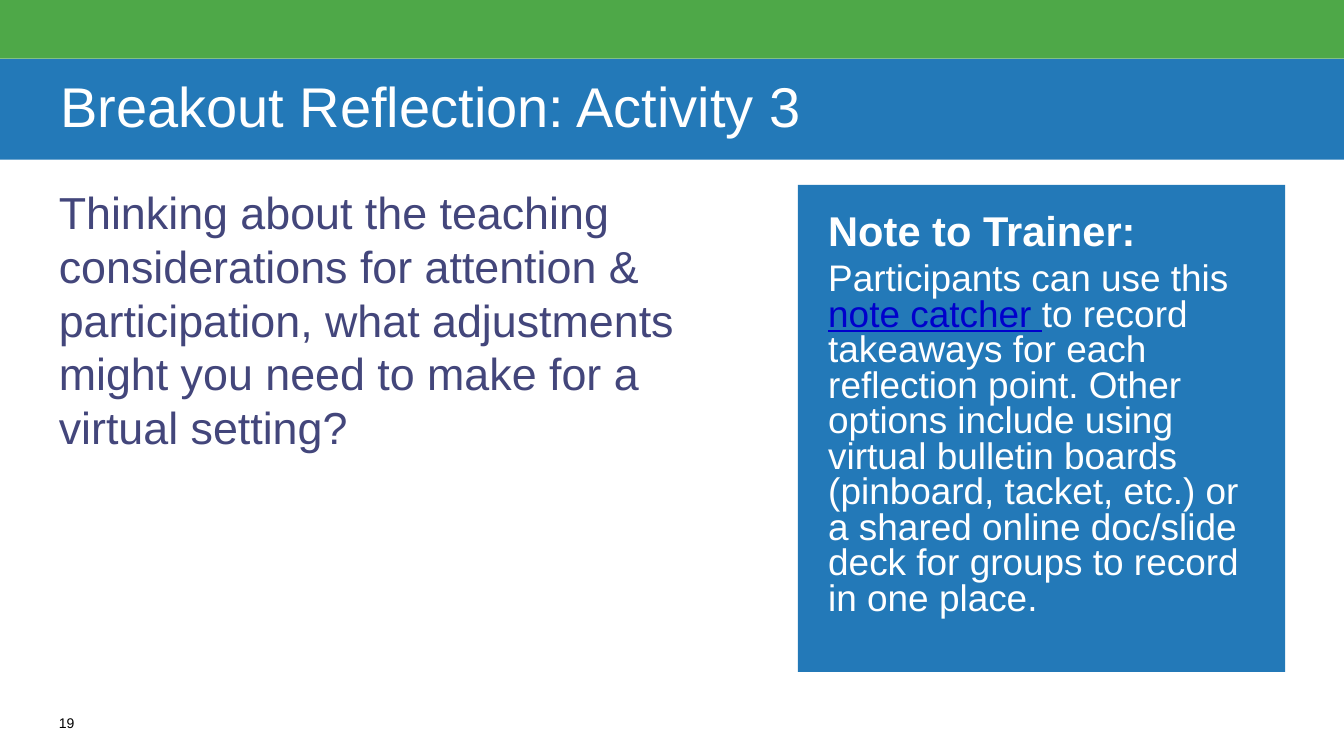
from pptx import Presentation
from pptx.dml.color import RGBColor
from pptx.enum.shapes import MSO_SHAPE as Shape
from pptx.enum.text import MSO_ANCHOR as Anchor, MSO_AUTO_SIZE as AutoSize, PP_ALIGN as Align
from pptx.util import Pt
from lxml.etree import SubElement
from pptx.oxml.ns import qn

GREEN, BLUE, INDIGO = "4EA848", "2379B8", "43467B"
WHITE, BLACK, LINK = "FFFFFF", "000000", "0000CC"
WIDTH, HEIGHT = 960, 540
MARGIN, BAND, TITLE_HEIGHT = 42, 42, 72
CONTENT_TOP, NOTE_SIDE = 132, 348


def paint(colour_format, colour):
    colour_format.rgb = RGBColor.from_string(colour)


class SlideBuilder:
    def __init__(self, page, font="Arial"):
        self.page = page
        self.font = font

    def fill(self, shape, colour):
        shape.fill.solid()
        paint(shape.fill.fore_color, colour)
        shape.line.fill.background()

    def band(self, left, top, width, height, colour):
        shape = self.page.shapes.add_shape(
            Shape.RECTANGLE, Pt(left), Pt(top), Pt(width), Pt(height))
        shape.shadow.inherit = False
        self.fill(shape, colour)

    def frame(self, shape, at, inset=(0, 0), anchor=Anchor.TOP):
        """Place a text shape; inset is (horizontal, vertical)."""
        shape.left, shape.top, shape.width, shape.height = map(Pt, at)
        text = shape.text_frame
        text.word_wrap = True
        text.auto_size = AutoSize.NONE
        text.vertical_anchor = anchor
        text.margin_left = text.margin_right = Pt(inset[0])
        text.margin_top = text.margin_bottom = Pt(inset[1])
        return text

    def placeholder(self, index, at, colour=None, **layout):
        shape = self.page.placeholders[index]
        if colour:
            self.fill(shape, colour)
        return self.frame(shape, at, **layout)

    def text_box(self, at):
        return self.frame(self.page.shapes.add_textbox(*map(Pt, at)), at)

    def set_text(self, para, *spans, size, colour, bold=False, spacing=1.0, before=0, after=0):
        """Fill a paragraph with spans: plain strings, or (text, colour) for underlined ones."""
        para.alignment = Align.LEFT
        para.line_spacing = spacing
        para.space_before, para.space_after = Pt(before), Pt(after)
        properties = para._p.get_or_add_pPr()
        properties.set("marL", "0")
        properties.set("indent", "0")
        SubElement(properties, qn("a:buNone"))
        for item in spans:
            underlined = isinstance(item, tuple)
            words, shade = item if underlined else (item, colour)
            span = para.add_run()
            span.text = words
            span.font.name = self.font
            span.font.size = Pt(size)
            span.font.bold = bold
            span.font.underline = underlined
            paint(span.font.color, shade)


def main():
    deck = Presentation()
    deck.slide_width, deck.slide_height = Pt(WIDTH), Pt(HEIGHT)
    page = deck.slides.add_slide(deck.slide_layouts.get_by_name("Two Content"))
    builder = SlideBuilder(page)

    builder.band(0, 0, WIDTH, BAND, GREEN)

    title = builder.placeholder(0, (0, BAND, WIDTH, TITLE_HEIGHT), BLUE,
                                inset=(43.2, 0), anchor=Anchor.MIDDLE)
    builder.set_text(title.paragraphs[0], "Breakout Reflection: Activity 3",
                     size=40, colour=WHITE, spacing=0.9)

    question = builder.placeholder(1, (MARGIN, CONTENT_TOP, 474, 194))
    builder.set_text(question.paragraphs[0],
                     "Thinking about the teaching considerations for attention & participation, "
                     "what adjustments might you need to make for a virtual setting?",
                     size=32, colour=INDIGO, after=6)

    note = builder.placeholder(
        2, (WIDTH - MARGIN - NOTE_SIDE, CONTENT_TOP, NOTE_SIDE, NOTE_SIDE), BLUE,
        inset=(21.6, 21.6))
    builder.set_text(note.paragraphs[0], "Note to Trainer:",
                     size=29.7, colour=WHITE, bold=True, spacing=0.8)
    builder.set_text(note.add_paragraph(),
                     "Participants can use this ", ("note catcher ", LINK),
                     "to record takeaways for each reflection point. Other options include "
                     "using virtual bulletin boards (pinboard, tacket, etc.) or a shared "
                     "online doc/slide deck for groups to record in one place.",
                     size=26.4, colour=WHITE, spacing=0.8, before=6, after=6)

    number = builder.text_box((MARGIN, 510, 30, 18))
    builder.set_text(number.paragraphs[0], "19", size=10, colour=BLACK)

    deck.save("out.pptx")


if __name__ == "__main__":
    main()
